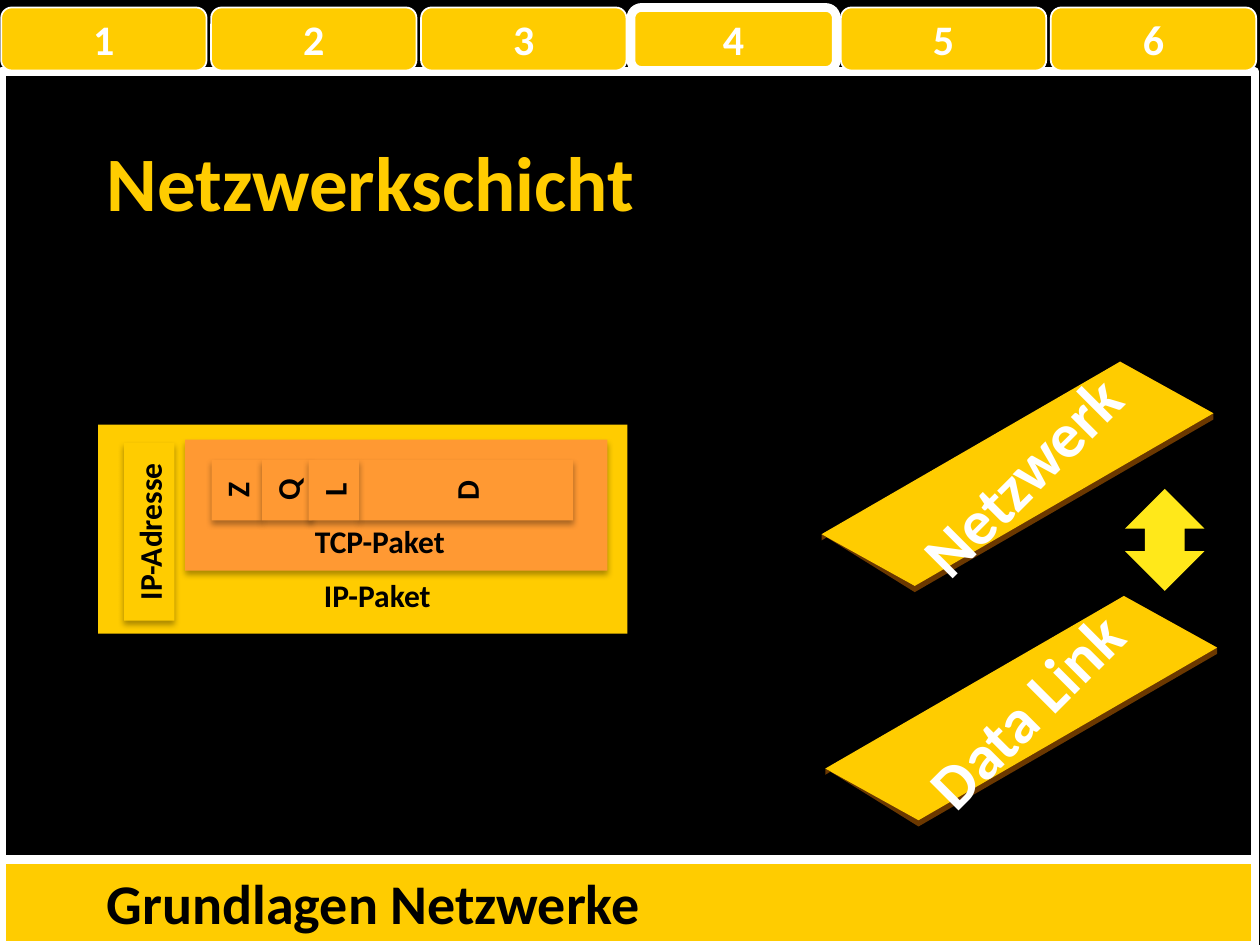
"""Build the network layer slide with its packet diagram and layer slabs."""
from pptx import Presentation
from pptx.dml.color import RGBColor
from pptx.enum.shapes import MSO_SHAPE
from pptx.enum.text import MSO_ANCHOR, PP_ALIGN
from pptx.oxml import parse_xml
from pptx.oxml.ns import nsdecls, qn
from pptx.util import Inches, Pt

GOLD = RGBColor(0xFF, 0xCC, 0x00)
ORANGE = RGBColor(0xFF, 0x99, 0x33)
YELLOW = RGBColor(0xFF, 0xE8, 0x1A)
BROWN = RGBColor(0x6B, 0x38, 0x00)
WHITE = RGBColor(0xFF, 0xFF, 0xFF)
BLACK = RGBColor(0x00, 0x00, 0x00)
SHADOW = (
    f'<a:outerShdw {nsdecls("a")} blurRad="44450" dist="27940" dir="5400000" rotWithShape="0">'
    '<a:srgbClr val="000000"><a:alpha val="32000"/></a:srgbClr></a:outerShdw>'
)


def paint(shape, fill, line_width=0, shadow=False):
    shape.shadow.inherit = False
    if fill is None:
        shape.fill.background()
    else:
        shape.fill.solid()
        shape.fill.fore_color.rgb = fill
    if line_width:
        shape.line.color.rgb = WHITE
        shape.line.width = Pt(line_width)
    else:
        shape.line.fill.background()
    if shadow:
        shape._element.spPr.find(qn("a:effectLst")).append(parse_xml(SHADOW))
    return shape


def write(shape, text, size, color, align=PP_ALIGN.CENTER):
    frame = shape.text_frame
    frame.word_wrap = True
    frame.vertical_anchor = MSO_ANCHOR.MIDDLE
    frame.text = text
    paragraph = frame.paragraphs[0]
    paragraph.alignment = align
    font = paragraph.runs[0].font
    font.name = "Calibri"
    font.size = Pt(size)
    font.bold = True
    font.color.rgb = color


prs = Presentation()
prs.slide_width = Inches(10)
prs.slide_height = Inches(7.5)
slide = prs.slides.add_slide(prs.slide_layouts[6])
slide.background.fill.solid()
slide.background.fill.fore_color.rgb = BLACK
shapes = slide.shapes

packet = shapes.add_group_shape().shapes
for left, top, width, height, color in (
    (0.78, 3.37, 4.2, 1.66, GOLD),
    (1.47, 3.49, 3.35, 1.04, ORANGE),
):
    layer = packet.add_shape(
        MSO_SHAPE.RECTANGLE, Inches(left), Inches(top), Inches(width), Inches(height)
    )
    paint(layer, color, shadow=True)

for label, left, top, width, height, color in (
    ("Z", 1.64, 3.69, 0.48, 0.4, ORANGE),
    ("Q", 2.04, 3.69, 0.48, 0.4, ORANGE),
    ("D", 3.46, 3.04, 0.48, 1.7, ORANGE),
    ("L", 2.41, 3.69, 0.48, 0.4, ORANGE),
    ("IP-Adresse", 0.48, 4.02, 1.41, 0.4, GOLD),
):
    field = packet.add_shape(
        MSO_SHAPE.RECTANGLE, Inches(left), Inches(top), Inches(width), Inches(height)
    )
    field.rotation = 270
    paint(field, color, shadow=True)
    write(field, label, 18, BLACK)

for label, left, top in (("TCP-Paket", 2.15, 4.09), ("IP-Paket", 2.13, 4.52)):
    caption = packet.add_textbox(Inches(left), Inches(top), Inches(1.73), Inches(0.4))
    write(caption, label, 18, BLACK)

for top, height, color in ((6.82, 0.68, GOLD), (0.57, 6.25, None)):
    panel = shapes.add_shape(
        MSO_SHAPE.RECTANGLE, Inches(0.01), Inches(top), Inches(9.95), Inches(height)
    )
    paint(panel, color, line_width=5)

for label, top, height, size, color in (
    ("Netzwerkschicht", 0.82, 1.23, 44, GOLD),
    ("Grundlagen Netzwerke", 6.82, 0.68, 32, BLACK),
):
    heading = shapes.add_textbox(Inches(0.75), Inches(top), Inches(8.5), Inches(height))
    write(heading, label, size, color, PP_ALIGN.LEFT)

SLAB = [(0, 1.37), (2.37, 0), (3.11, 0.41), (0.74, 1.78)]
THICKNESS = 0.05
for label, left, top in (("Netzwerk", 6.52, 2.87), ("Data Link", 6.55, 4.73)):
    for drop, color in ((THICKNESS, BROWN), (0, GOLD)):
        corners = [(Inches(left + x), Inches(top + y + drop)) for x, y in SLAB]
        if drop:
            corners[1:3] = [
                (Inches(left + SLAB[1][0]), Inches(top + SLAB[1][1])),
                (Inches(left + SLAB[2][0]), Inches(top + SLAB[2][1])),
                corners[2],
            ]
            corners.append((Inches(left), Inches(top + SLAB[0][1])))
        outline = shapes.build_freeform(*corners[0])
        outline.add_line_segments(corners[1:])
        paint(outline.convert_to_shape(), color)
    name = shapes.add_textbox(
        Inches(left - 0.09), Inches(top + 0.38), Inches(3.35), Inches(1.04)
    )
    name.rotation = 315
    write(name, label, 36, WHITE)

exchange = shapes.add_shape(
    MSO_SHAPE.UP_DOWN_ARROW, Inches(8.93), Inches(3.88), Inches(0.63), Inches(0.81)
)
paint(exchange, YELLOW)

CURRENT = 4
for number in range(1, 7):
    tab = shapes.add_shape(
        MSO_SHAPE.ROUNDED_RECTANGLE,
        Inches(0.01 + (number - 1) * 1.666), Inches(0.06), Inches(1.63), Inches(0.5),
    )
    paint(tab, GOLD, line_width=5 if number == CURRENT else 1)
    write(tab, str(number), 24, WHITE)

prs.save("out.pptx")
